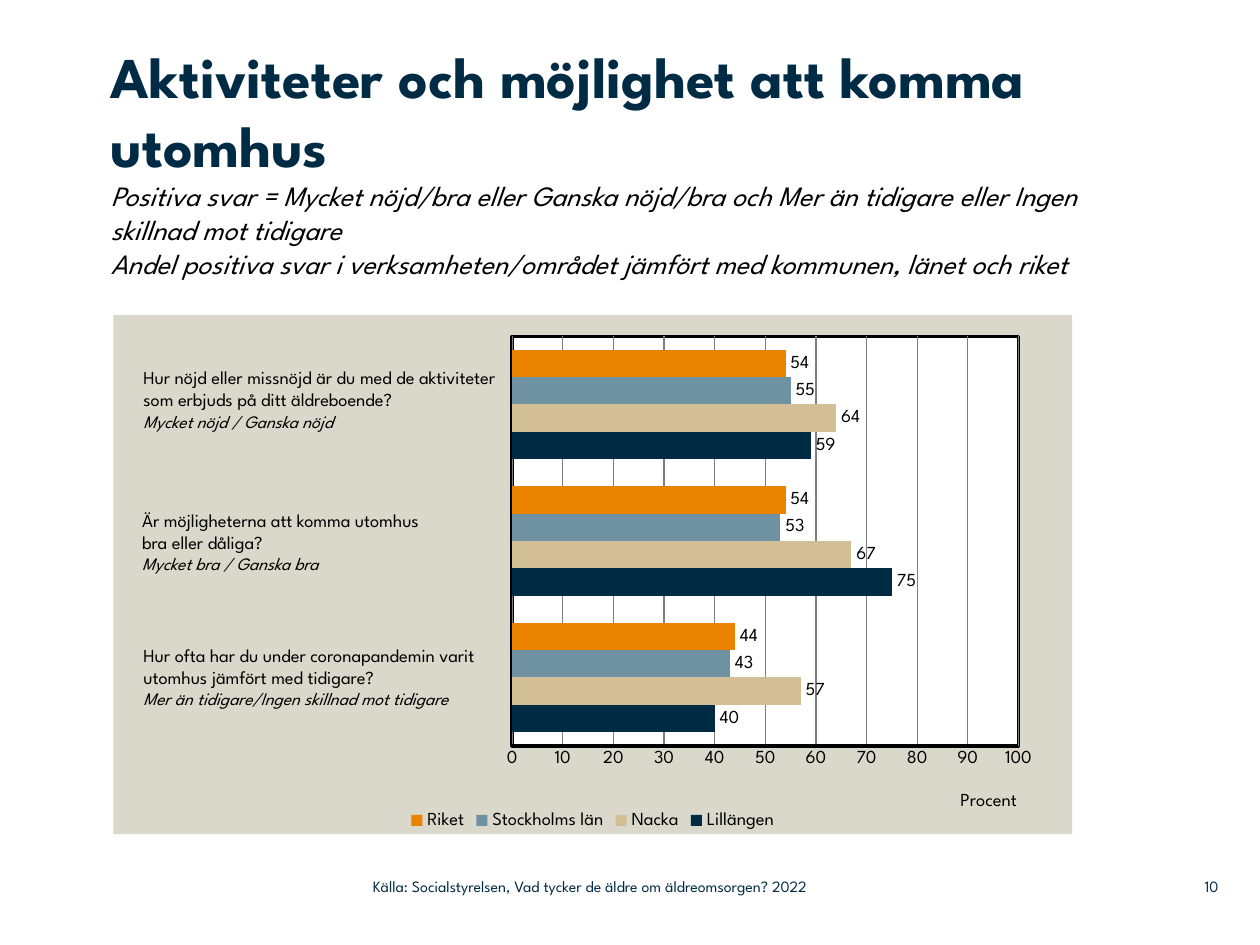
from lxml import etree
from pptx import Presentation
from pptx import util as u
from pptx.chart.data import CategoryChartData
from pptx.dml.color import RGBColor
from pptx.enum import chart as charts, text
from pptx.oxml import parse_xml
from pptx.oxml.ns import nsdecls, qn

FONT = "League Spartan"
COLORS = {
    "navy": "002B45", "sand": "D3BF96", "blue": "6F92A2", "orange": "E98300",
    "black": "000000", "grid": "808080", "panel": "DAD7CB", "white": "FFFFFF",
}
SERIES = [
    ("Lillängen", (40, 75, 59), "navy"),
    ("Nacka", (57, 67, 64), "sand"),
    ("Stockholms län", (43, 53, 55), "blue"),
    ("Riket", (44, 54, 54), "orange"),
]
# Each question: box, lines of the question, answers counted as positive
QUESTIONS = [
    ((1.04, 2.86, 3, 0.98),
     ["Hur nöjd eller missnöjd är du med de aktiviteter som erbjuds på ditt äldreboende?"],
     "Mycket nöjd / Ganska nöjd"),
    ((1.03, 3.99, 3.01, 0.81),
     ["Är möjligheterna att komma utomhus", "bra eller dåliga?"],
     "Mycket bra / Ganska bra"),
    ((1.04, 5.06, 3.01, 0.79),
     ["Hur ofta har du under coronapandemin varit utomhus jämfört med tidigare?"],
     "Mer än tidigare/Ingen skillnad mot tidigare"),
]


def rgb(name):
    return RGBColor.from_string(COLORS[name])


def style(font, size, color="black", bold=False, italic=False):
    font.name, font.size = FONT, u.Pt(size)
    font.bold, font.italic = bold, italic
    font.color.rgb = rgb(color)


def add_span(para, words, *look, **flags):
    span = para.add_run()
    span.text = words
    style(span.font, *look, **flags)


def add_break(para, size):
    para.add_line_break()
    line_break = para._p.findall(qn("a:br"))[-1]
    etree.SubElement(line_break, qn("a:rPr")).set("sz", str(size * 100))


def clear_insets(frame):
    frame.margin_left = frame.margin_right = 0
    frame.margin_top = frame.margin_bottom = 0


def add_box(page, area):
    frame = page.shapes.add_textbox(*map(u.Inches, area)).text_frame
    frame.word_wrap = True
    return frame


def place_title(page, area):
    title = page.shapes.title
    title.left, title.top, title.width, title.height = map(u.Inches, area)
    frame = title.text_frame
    clear_insets(frame)
    frame.word_wrap = True
    frame.auto_size = text.MSO_AUTO_SIZE.NONE
    frame.vertical_anchor = text.MSO_ANCHOR.TOP
    para = frame.paragraphs[0]
    para.alignment = text.PP_ALIGN.LEFT
    add_span(para, "Aktiviteter och möjlighet att komma utomhus", 33, "navy", bold=True)
    for line in (
        "Positiva svar = Mycket nöjd/bra eller Ganska nöjd/bra och Mer än tidigare "
        "eller Ingen skillnad mot tidigare",
        "Andel positiva svar i verksamheten/området jämfört med kommunen, länet och riket",
    ):
        add_break(para, 16)
        add_span(para, line, 16, italic=True)


def manual_layout(x, y, size=None):
    parts = [("xMode", "edge"), ("yMode", "edge"), ("x", x), ("y", y)]
    if size:
        parts = [("layoutTarget", "inner")] + parts + [("w", size[0]), ("h", size[1])]
    inner = "".join(f'<c:{tag} val="{value}"/>' for tag, value in parts)
    return parse_xml(f'<c:layout {nsdecls("c")}><c:manualLayout>{inner}'
                     '</c:manualLayout></c:layout>')


def area_format(fill, line=None, width=0):
    border = (f'<a:ln w="{u.Pt(width)}"><a:solidFill><a:srgbClr val="{COLORS[line]}"/>'
              '</a:solidFill></a:ln>') if line else "<a:ln><a:noFill/></a:ln>"
    return parse_xml(f'<c:spPr {nsdecls("c", "a")}><a:solidFill>'
                     f'<a:srgbClr val="{COLORS[fill]}"/></a:solidFill>{border}</c:spPr>')


def place_chart(page, area):
    data = CategoryChartData()
    data.categories = ["1", "2", "3"]
    for name, values, _ in SERIES:
        data.add_series(name, values)
    chart = page.shapes.add_chart(
        charts.XL_CHART_TYPE.BAR_CLUSTERED, *map(u.Inches, area), data).chart
    chart.has_title = False
    style(chart.font, 10.5)

    # Bars and value labels
    plot = chart.plots[0]
    plot.gap_width, plot.overlap, plot.vary_by_categories = 100, 0, False
    for series, (_, _, color) in zip(plot.series, SERIES):
        series.format.fill.solid()
        series.format.fill.fore_color.rgb = rgb(color)
        labels = series.data_labels
        labels.show_value = True
        labels.position = charts.XL_LABEL_POSITION.OUTSIDE_END
        style(labels.font, 10.5)

    # Axes
    chart.category_axis.visible = False
    axis = chart.value_axis
    axis.minimum_scale, axis.maximum_scale, axis.major_unit = 0, 100, 10
    axis.major_tick_mark = axis.minor_tick_mark = charts.XL_TICK_MARK.NONE
    axis.format.line.color.rgb = rgb("black")
    axis.format.line.width = u.Pt(2)
    axis.has_major_gridlines = True
    axis.major_gridlines.format.line.color.rgb = rgb("grid")
    axis.major_gridlines.format.line.width = u.Pt(0.75)
    style(axis.tick_labels.font, 10.5)
    axis_title = axis.axis_title
    add_span(axis_title.text_frame.paragraphs[0], "Procent", 10.5)
    title_xml = axis_title._element
    for old in title_xml.findall(qn("c:layout")):
        title_xml.remove(old)
    title_xml.find(qn("c:tx")).addnext(manual_layout(0.88, 0.91))

    # Legend
    chart.has_legend = True
    chart.legend.position = charts.XL_LEGEND_POSITION.BOTTOM
    chart.legend.include_in_layout = False
    style(chart.legend.font, 10.5)

    # Backgrounds and plot position
    chart_xml = chart._chartSpace.find(qn("c:chart"))
    chart_xml.addnext(area_format("panel"))
    plot_xml = chart_xml.find(qn("c:plotArea"))
    for old in plot_xml.findall(qn("c:layout")):
        plot_xml.remove(old)
    plot_xml.insert(0, manual_layout(0.416, 0.041, (0.528, 0.789)))
    plot_xml.append(area_format("white", "black", 2))


def place_question(page, area, lines, answers):
    frame = add_box(page, area)
    for index, line in enumerate(lines):
        para = frame.paragraphs[0] if index == 0 else frame.add_paragraph()
        add_span(para, line, 10.5)
    add_span(frame.add_paragraph(), answers, 10, italic=True)


def place_footer(page, area, words, align):
    frame = add_box(page, area)
    clear_insets(frame)
    frame.vertical_anchor = text.MSO_ANCHOR.MIDDLE
    para = frame.paragraphs[0]
    para.alignment = align
    add_span(para, words, 9, "navy")


def main():
    deck = Presentation()
    deck.slide_width, deck.slide_height = u.Inches(10), u.Inches(7.5)
    page = deck.slides.add_slide(deck.slide_layouts[5])
    place_title(page, (0.88, 0.32, 7.8, 1.89))
    place_chart(page, (0.9, 2.5, 7.61, 4.12))
    for question in QUESTIONS:
        place_question(page, *question)
    place_footer(page, (2.96, 6.89, 4.43, 0.29),
                 "Källa: Socialstyrelsen, Vad tycker de äldre om äldreomsorgen? 2022",
                 text.PP_ALIGN.LEFT)
    place_footer(page, (9.2, 6.89, 0.47, 0.29), "10", text.PP_ALIGN.RIGHT)
    deck.save("out.pptx")


if __name__ == "__main__":
    main()
